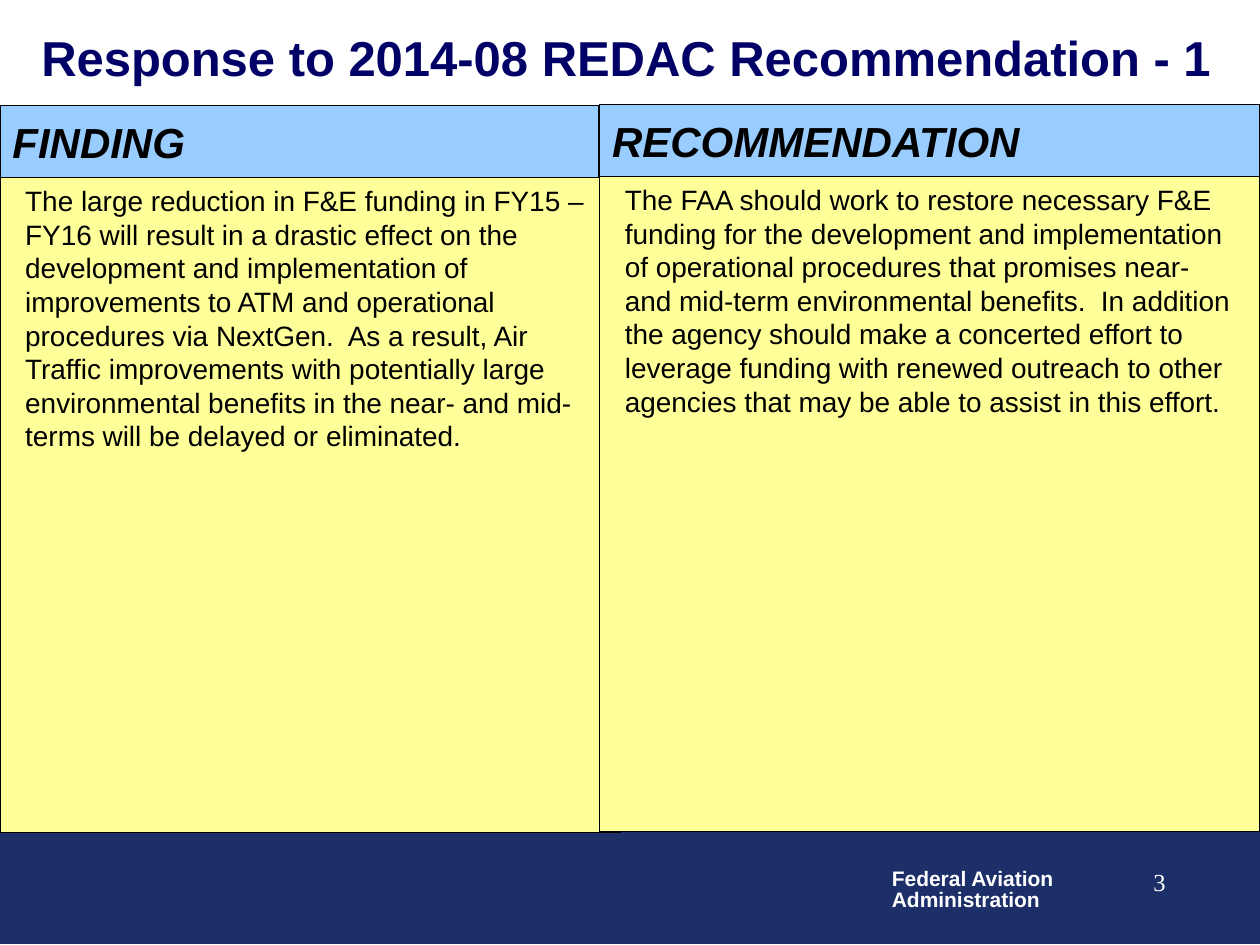
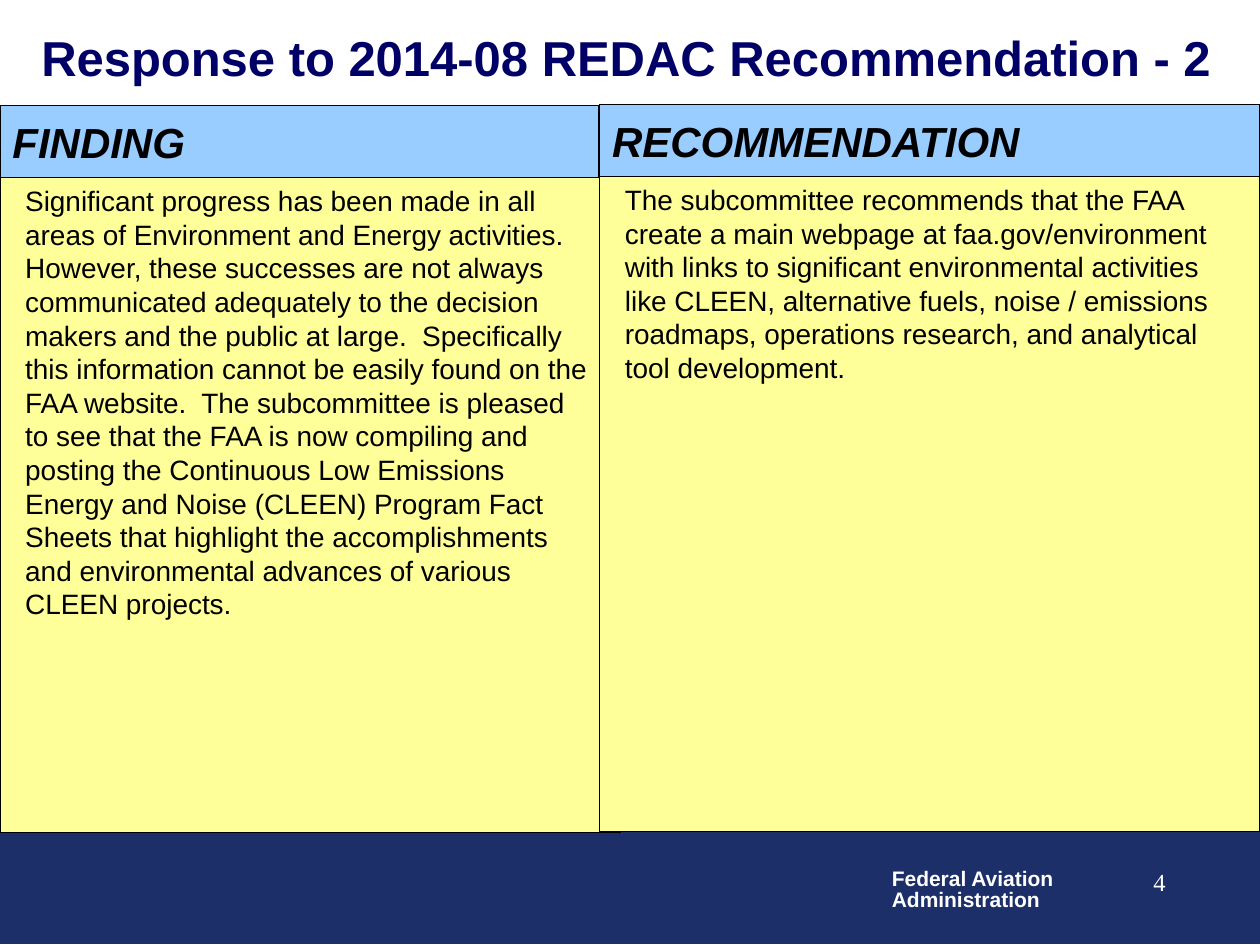
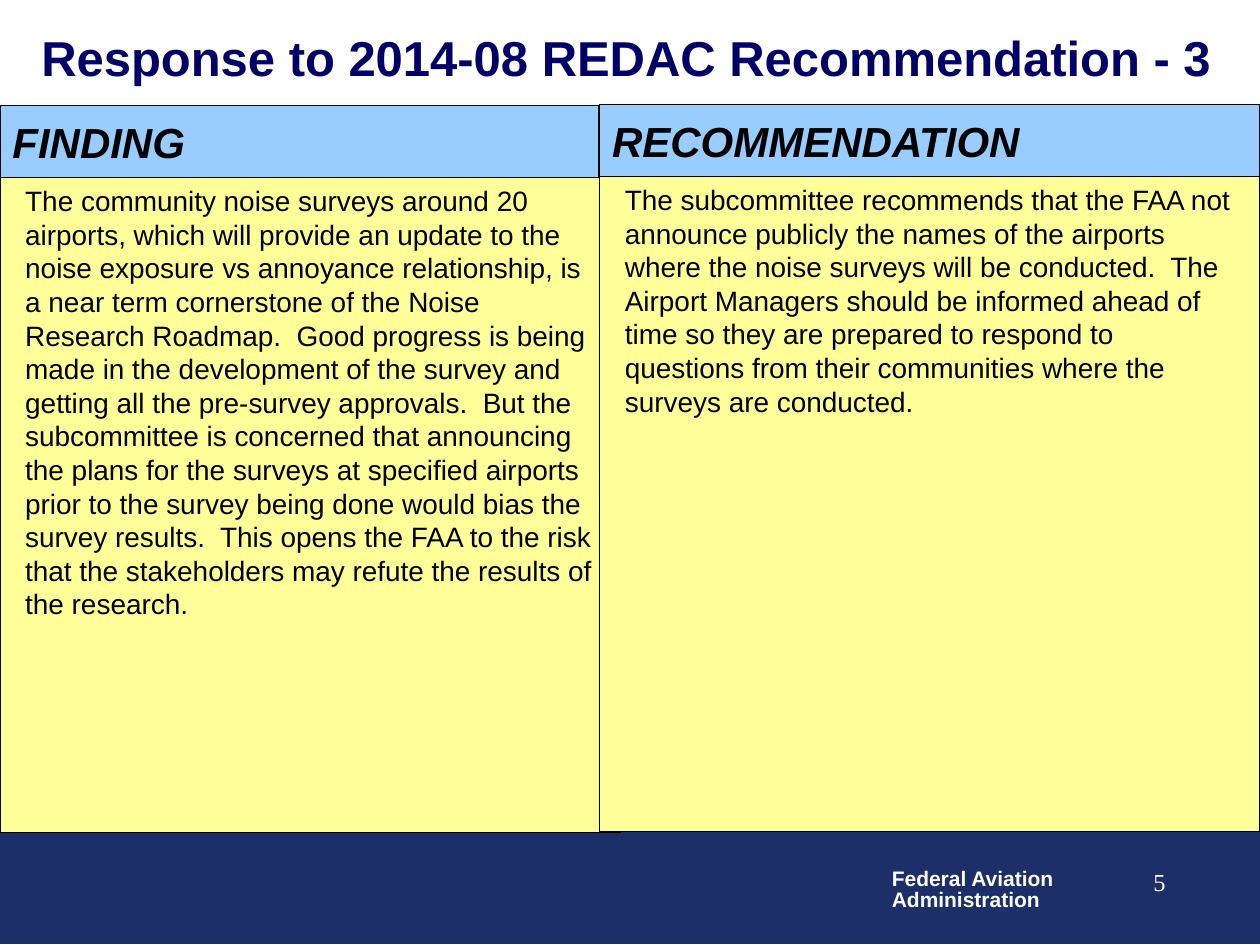
from dataclasses import dataclass
from typing import NamedTuple

from pptx import Presentation
from pptx import util as u
from pptx.dml.color import RGBColor
from pptx.enum import shapes, text

PX = 9144


def px(length: int) -> u.Emu:
    return u.Emu(length * PX)


class Box(NamedTuple):
    left: int
    top: int
    width: int
    height: int

    def emu(self) -> list[u.Emu]:
        return [px(length) for length in self]


@dataclass(frozen=True)
class TextStyle:
    size: int
    color: str
    font: str = "Arial"
    bold: bool = False
    italic: bool = False
    align: text.PP_ALIGN = text.PP_ALIGN.LEFT
    anchor: text.MSO_ANCHOR = text.MSO_ANCHOR.TOP
    wrap: bool = True
    side_inset: int = 10
    line_spacing: float = 1.0


@dataclass(frozen=True)
class Theme:
    navy: str = "1D2F68"
    header_blue: str = "99CCFF"
    body_yellow: str = "FFFF99"
    outline: str = "000000"
    outline_width: float = 0.75
    title: TextStyle = TextStyle(28, "000066", bold=True, anchor=text.MSO_ANCHOR.MIDDLE)
    header: TextStyle = TextStyle(
        24, "000000", bold=True, italic=True, anchor=text.MSO_ANCHOR.MIDDLE, wrap=False
    )
    body: TextStyle = TextStyle(16, "000000", side_inset=20)
    agency: TextStyle = TextStyle(12, "FFFFFF", bold=True, wrap=False, line_spacing=0.85)
    page: TextStyle = TextStyle(
        14, "FFFFFF", font="Times New Roman", align=text.PP_ALIGN.RIGHT
    )


class Column(NamedTuple):
    heading: str
    header: Box
    body: Box


class Response(NamedTuple):
    finding: str
    recommendation: str


THEME = Theme()
SLIDE_WIDTH, SLIDE_HEIGHT = 1000, 750
FIRST_PAGE = 3
TITLE = Box(23, 12, 964, 67)
FOOTER = Box(0, 660, SLIDE_WIDTH, 89)
AGENCY = Box(698, 685, 150, 44)
PAGE = Box(727, 683, 208, 50)
COLUMNS = (
    Column("FINDING", Box(0, 84, 475, 57), Box(0, 141, 492, 520)),
    Column("RECOMMENDATION", Box(476, 83, 524, 57), Box(476, 140, 524, 520)),
)
RESPONSES = (
    Response(
        "The large reduction in F&E funding in FY15 – FY16 will result in a drastic "
        "effect on the development and implementation of improvements to ATM and "
        "operational procedures via NextGen.  As a result, Air Traffic improvements "
        "with potentially large environmental benefits in the near- and mid-terms "
        "will be delayed or eliminated.",
        "The FAA should work to restore necessary F&E funding for the development and "
        "implementation of operational procedures that promises near- and mid-term "
        "environmental benefits.  In addition the agency should make a concerted "
        "effort to leverage funding with renewed outreach to other agencies that may "
        "be able to assist in this effort.",
    ),
    Response(
        "Significant progress has been made in all areas of Environment and Energy "
        "activities.  However, these successes are not always communicated adequately "
        "to the decision makers and the public at large.  Specifically this "
        "information cannot be easily found on the FAA website.  The subcommittee is "
        "pleased to see that the FAA is now compiling and posting the Continuous Low "
        "Emissions Energy and Noise (CLEEN) Program Fact Sheets that highlight the "
        "accomplishments and environmental advances of various CLEEN projects.",
        "The subcommittee recommends that the FAA create a main webpage at "
        "faa.gov/environment with links to significant environmental activities like "
        "CLEEN, alternative fuels, noise / emissions roadmaps, operations research, "
        "and analytical tool development.",
    ),
    Response(
        "The community noise surveys around 20 airports, which will provide an update "
        "to the noise exposure vs annoyance relationship, is a near term cornerstone "
        "of the Noise Research Roadmap.  Good progress is being made in the "
        "development of the survey and getting all the pre-survey approvals.  But the "
        "subcommittee is concerned that announcing the plans for the surveys at "
        "specified airports prior to the survey being done would bias the survey "
        "results.  This opens the FAA to the risk that the stakeholders may refute "
        "the results of the research.",
        "The subcommittee recommends that the FAA not announce publicly the names of "
        "the airports where the noise surveys will be conducted.  The Airport "
        "Managers should be informed ahead of time so they are prepared to respond to "
        "questions from their communities where the surveys are conducted.",
    ),
)


def apply(target, values: dict) -> None:
    for attribute, value in values.items():
        setattr(target, attribute, value)


def write(shape, words: str, style: TextStyle) -> None:
    frame = shape.text_frame
    frame.text = words
    apply(frame, {
        "word_wrap": style.wrap,
        "vertical_anchor": style.anchor,
        "margin_left": px(style.side_inset),
        "margin_right": px(style.side_inset),
        "margin_top": px(5),
        "margin_bottom": px(5),
    })
    for paragraph in frame.paragraphs:
        apply(paragraph, {"alignment": style.align, "line_spacing": style.line_spacing})
        for run in paragraph.runs:
            apply(run.font, {
                "name": style.font,
                "size": u.Pt(style.size),
                "bold": style.bold,
                "italic": style.italic,
            })
            run.font.color.rgb = RGBColor.from_string(style.color)


def add_label(slide, box: Box, words: str, style: TextStyle):
    label = slide.shapes.add_textbox(*box.emu())
    write(label, words, style)
    return label


def add_panel(slide, box: Box, fill: str, outline: str):
    panel = slide.shapes.add_shape(shapes.MSO_SHAPE.RECTANGLE, *box.emu())
    panel.shadow.inherit = False
    panel.fill.solid()
    panel.fill.fore_color.rgb = RGBColor.from_string(fill)
    panel.line.color.rgb = RGBColor.from_string(outline)
    panel.line.width = u.Pt(THEME.outline_width)
    return panel


def add_footer(slide) -> None:
    add_panel(slide, FOOTER, THEME.navy, THEME.navy)
    agency = add_label(slide, AGENCY, "Federal Aviation\nAdministration", THEME.agency)
    agency.text_frame.auto_size = text.MSO_AUTO_SIZE.SHAPE_TO_FIT_TEXT


def add_column(slide, column: Column, statement: str) -> None:
    body = add_panel(slide, column.body, THEME.body_yellow, THEME.outline)
    write(body, statement, THEME.body)
    header = add_panel(slide, column.header, THEME.header_blue, THEME.outline)
    write(header, column.heading, THEME.header)


def add_response(deck, number: int, response: Response) -> None:
    slide = deck.slides.add_slide(deck.slide_layouts[6])
    add_footer(slide)
    for column, statement in zip(COLUMNS, response):
        add_column(slide, column, statement)
    title = f"Response to 2014-08 REDAC Recommendation - {number}"
    add_label(slide, TITLE, title, THEME.title)
    add_label(slide, PAGE, str(FIRST_PAGE + number - 1), THEME.page)


def main() -> None:
    deck = Presentation()
    apply(deck, {"slide_width": px(SLIDE_WIDTH), "slide_height": px(SLIDE_HEIGHT)})
    for number, response in enumerate(RESPONSES, start=1):
        add_response(deck, number, response)
    deck.save("out.pptx")


if __name__ == "__main__":
    main()
